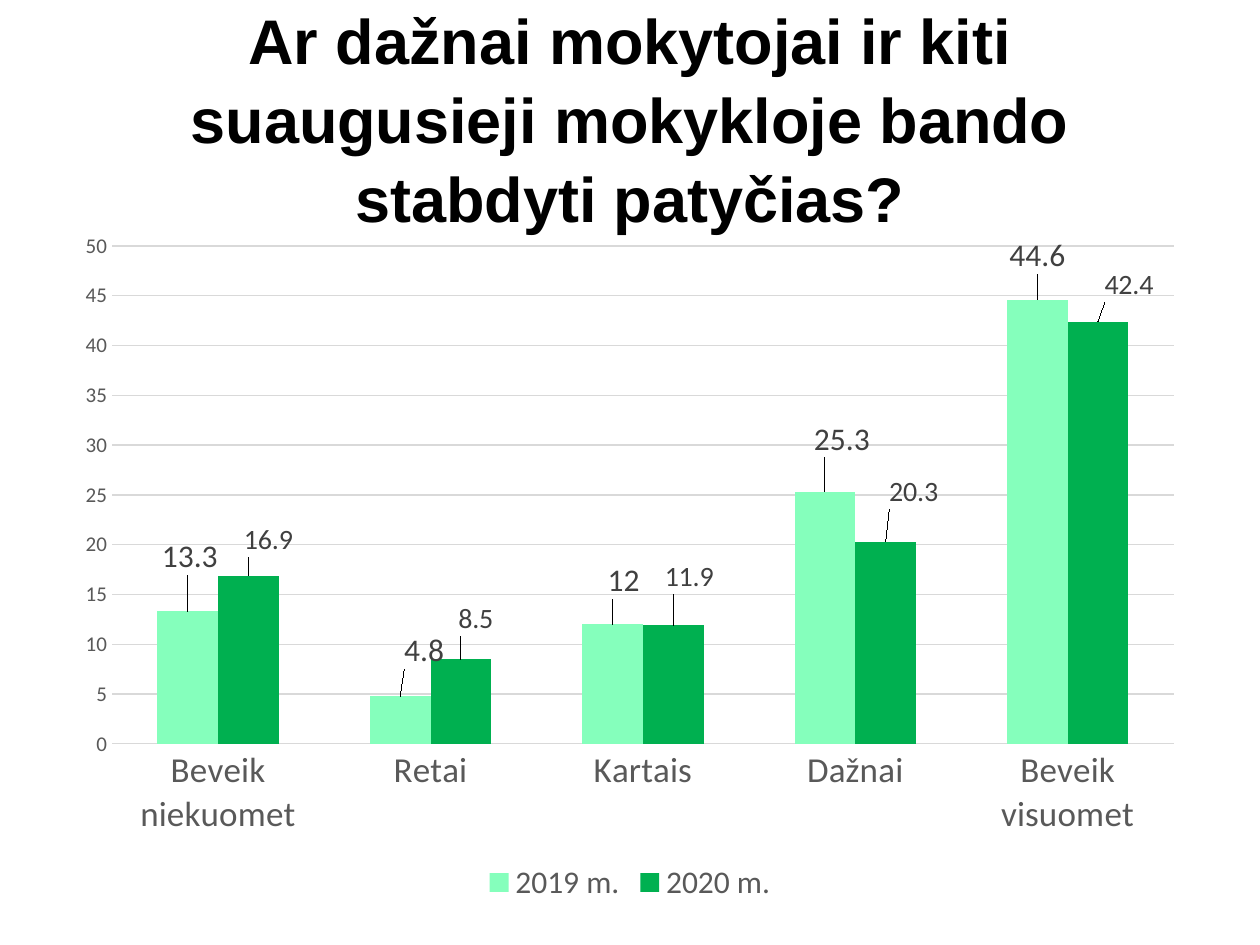
from lxml import etree
from pptx import Presentation
from pptx import util as u
from pptx.chart.data import CategoryChartData
from pptx.dml.color import RGBColor
from pptx.enum import chart as ch, text
from pptx.oxml.ns import qn

PX = 914400 / 126
C = {"title": "000000", "axis": "595959", "label": "404040", "grid": "D9D9D9",
     "2019": "85FFBC", "2020": "00B050"}


def px(*values):
    return [u.Emu(round(v * PX)) for v in values]


def style(font, size, color, name="Calibri", bold=False):
    font.size = u.Pt(size)
    font.name = name
    font.bold = bold
    font.color.rgb = RGBColor.from_string(C[color])


def layout(parent, index, **parts):
    """Insert a manual layout into a chart element."""
    old = parent.find(qn("c:layout"))
    if old is not None:
        parent.remove(old)
    box = etree.Element(qn("c:layout"))
    manual = etree.SubElement(box, qn("c:manualLayout"))
    for tag, val in parts.items():
        etree.SubElement(manual, qn("c:" + tag)).set("val", str(val))
    parent.insert(index, box)


prs = Presentation()
prs.slide_width, prs.slide_height = px(1260, 945)
s = prs.slides.add_slide(prs.slide_layouts[6])

# Title
tf = s.shapes.add_textbox(*px(63, 38, 1134, 157)).text_frame
tf.word_wrap = True
tf.vertical_anchor = text.MSO_ANCHOR.MIDDLE
p = tf.paragraphs[0]
p.alignment = text.PP_ALIGN.CENTER
p.line_spacing = 1.05
r = p.add_run()
r.text = "Ar dažnai mokytojai ir kiti suaugusieji mokykloje bando stabdyti patyčias?"
style(r.font, 36, "title", "Arial", True)

# Chart
CW, CH = 1134, 688
data = CategoryChartData()
data.categories = ["Beveik niekuomet", "Retai", "Kartais", "Dažnai", "Beveik visuomet"]
data.add_series("2019 m.", [13.3, 4.8, 12, 25.3, 44.6])
data.add_series("2020 m.", [16.9, 8.5, 11.9, 20.3, 42.4])
chart = s.shapes.add_chart(ch.XL_CHART_TYPE.COLUMN_CLUSTERED,
                           *px(63, 220, CW, CH), data).chart
chart.has_title = False
style(chart.font, 10, "title")
layout(chart._chartSpace.chart.plotArea, 0, layoutTarget="inner", xMode="edge",
       yMode="edge", x=49 / CW, y=26 / CH, w=1062 / CW, h=498 / CH)

# Axes and legend
cat, val = chart.category_axis, chart.value_axis
for axis, size in ((cat, 20), (val, 12)):
    axis.major_tick_mark = axis.minor_tick_mark = ch.XL_TICK_MARK.NONE
    axis.format.line.fill.background()
    style(axis.tick_labels.font, size, "axis")
val.minimum_scale, val.maximum_scale, val.major_unit = 0, 50, 5
val.has_major_gridlines = True
grid = val.major_gridlines.format.line
grid.width = u.Pt(0.75)
grid.color.rgb = RGBColor.from_string(C["grid"])
chart.has_legend = True
chart.legend.position = ch.XL_LEGEND_POSITION.BOTTOM
chart.legend.include_in_layout = False
style(chart.legend.font, 18, "axis")

# Series, with each value label nudged by px from its bar end
plot = chart.plots[0]
plot.gap_width, plot.overlap = 150, 0
plot.vary_by_categories = False
looks = [("2019", 18, [(2, -31), (24, -22), (11, -20), (17, -29), (0, -20)]),
         ("2020", 16, [(20, -13), (15, -18), (16, -26), (28, -27), (31, -14)])]
for ser, (color, size, shifts) in zip(plot.series, looks):
    ser.format.fill.solid()
    ser.format.fill.fore_color.rgb = RGBColor.from_string(C[color])
    labels = ser.data_labels
    labels.show_value = True
    style(labels.font, size, "label")
    for i, shift in enumerate(shifts):
        label = ser.points[i].data_label
        style(label.font, size, "label")
        label.position = ch.XL_LABEL_POSITION.OUTSIDE_END
    for node, (dx, dy) in zip(ser._element.iter(qn("c:dLbl")), shifts):
        layout(node, 1, x=round(dx / CW, 4), y=round(dy / CH, 4))

prs.save("out.pptx")
